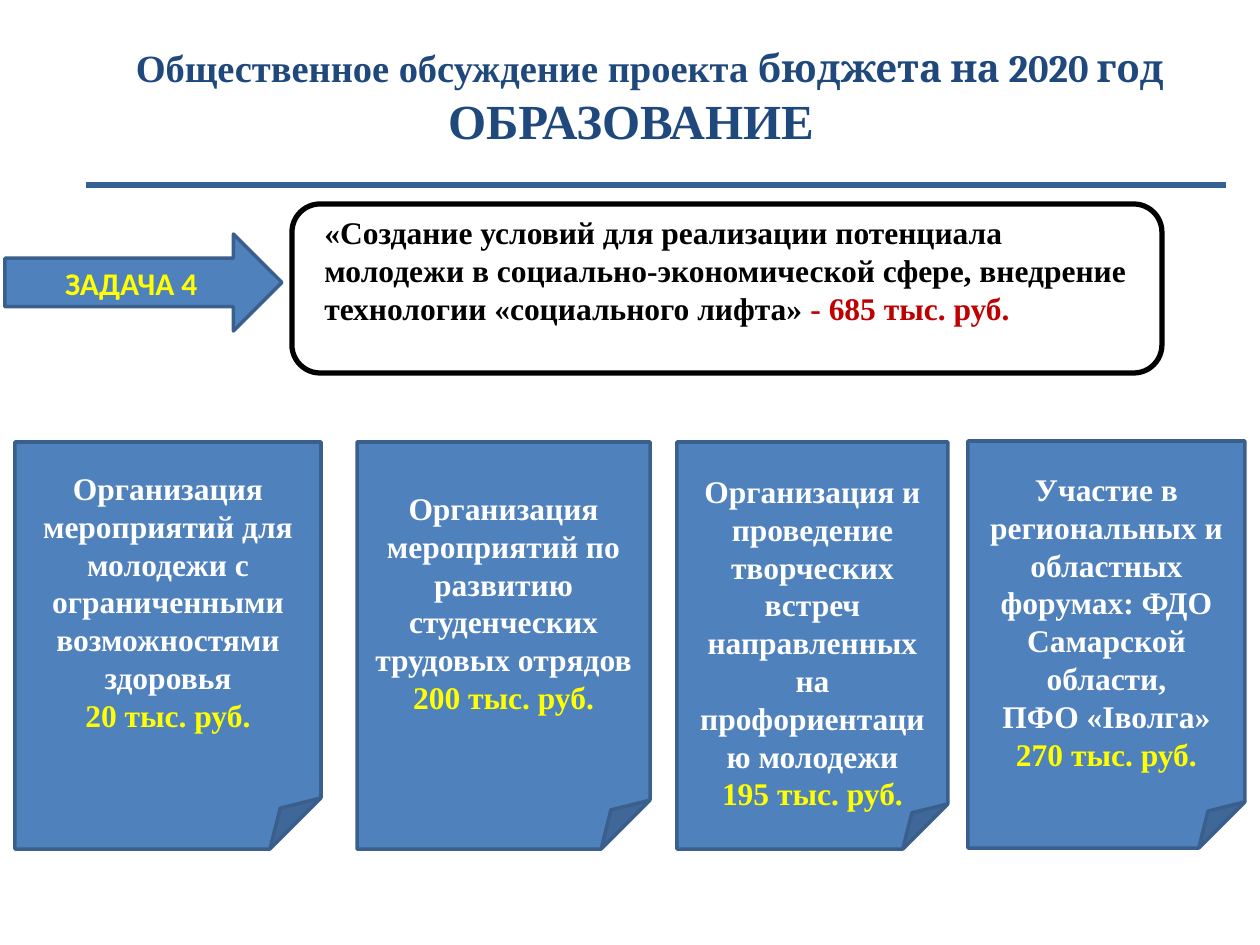
from typing import NamedTuple

from pptx import Presentation
from pptx.dml.color import RGBColor
from pptx.enum.shapes import MSO_CONNECTOR as Connector, MSO_SHAPE as Shape
from pptx.enum.text import MSO_ANCHOR as Anchor, PP_ALIGN as Align
from pptx.oxml.ns import qn
from pptx.util import Emu, Pt

PX = 914400 / 126
SERIF = "Times New Roman"
COLORS = {
    "blue": "4F81BD", "edge": "3A5F8C", "rule": "376092", "navy": "1F497D",
    "white": "FFFFFF", "black": "000000", "yellow": "FFFF00", "red": "C00000",
}


class Span(NamedTuple):
    text: str
    color: str
    size: int = 18
    font: str = SERIF


class Card(NamedTuple):
    left: int
    top: int
    width: int
    inset: int
    lines: tuple[str, ...]
    cost: str


CARDS = (
    Card(15, 442, 306, 27,
         ("Организация мероприятий для молодежи с ограниченными возможностями здоровья",),
         "20 тыс. руб."),
    Card(357, 442, 293, 47,
         ("Организация мероприятий по развитию студенческих трудовых отрядов",),
         "200 тыс. руб."),
    Card(677, 442, 271, 30,
         ("Организация и проведение творческих встреч направленных на профориентацию молодежи",),
         "195 тыс. руб."),
    Card(968, 441, 277, 29,
         ("Участие в региональных и областных форумах: ФДО Самарской области,",
          "ПФО «Iволга»"),
         "270 тыс. руб."),
)


def px(length: int) -> Emu:
    return Emu(round(length * PX))


def rgb(name: str) -> RGBColor:
    return RGBColor.from_string(COLORS[name])


def write(box, paragraphs: list[list[Span]], *, align=Align.CENTER,
          anchor=Anchor.MIDDLE, inset: int = 6, indent: int = 0) -> None:
    """Fill a box with bold text, one list of spans per paragraph."""
    frame = box.text_frame
    frame.word_wrap = True
    frame.vertical_anchor = anchor
    frame.margin_top = px(inset)
    frame.margin_bottom = px(6 if anchor == Anchor.MIDDLE else 0)
    for index, spans in enumerate(paragraphs):
        para = frame.add_paragraph() if index else frame.paragraphs[0]
        para.alignment = align
        if indent:
            para._p.get_or_add_pPr().set("indent", str(px(indent)))
        for span in spans:
            run = para.add_run()
            run.text = span.text
            run.font.name = span.font
            run.font.size = Pt(span.size)
            run.font.bold = True
            run.font.color.rgb = rgb(span.color)


def add_box(page, kind, left: int, top: int, width: int, height: int, *,
            fill: str | None = "blue", line: str = "edge", weight: int = 2):
    box = page.shapes.add_shape(kind, px(left), px(top), px(width), px(height))
    box.shadow.inherit = False
    if fill:
        box.fill.solid()
        box.fill.fore_color.rgb = rgb(fill)
    else:
        box.fill.background()
    box.line.color.rgb = rgb(line)
    box.line.width = Pt(weight)
    return box


def add_text(page, left: int, top: int, width: int, height: int,
             paragraphs: list[list[Span]], **layout) -> None:
    box = page.shapes.add_textbox(px(left), px(top), px(width), px(height))
    write(box, paragraphs, **layout)


def add_rule(page, left: int, right: int, y: int) -> None:
    rule = page.shapes.add_connector(
        Connector.STRAIGHT, px(left), px(y), px(right), px(y))
    rule.line.color.rgb = rgb("rule")
    rule.line.width = Pt(3)
    properties = rule._element.spPr
    properties.append(properties.makeelement(qn("a:effectLst"), {}))


def add_card(page, card: Card) -> None:
    box = add_box(page, Shape.FOLDED_CORNER, card.left, card.top, card.width, 407)
    paragraphs = [[Span(line, "white")] for line in card.lines]
    write(box, paragraphs + [[Span(card.cost, "yellow")]],
          anchor=Anchor.TOP, inset=card.inset)


def main() -> None:
    deck = Presentation()
    deck.slide_width, deck.slide_height = px(1260), px(945)
    page = deck.slides.add_slide(deck.slide_layouts[6])

    # Task goal
    add_box(page, Shape.ROUNDED_RECTANGLE, 292, 204, 870, 169,
            fill=None, line="black", weight=3)
    add_text(page, 312, 207, 839, 127, [[
        Span("«Создание условий для реализации потенциала молодежи в "
             "социально-экономической сфере, внедрение технологии "
             "«социального лифта» ", "black"),
        Span("- 685 тыс. руб.", "red"),
    ]], align=Align.LEFT, anchor=Anchor.TOP)

    # Measures with their cost
    for card in CARDS:
        add_card(page, card)

    # Task number
    arrow = add_box(page, Shape.RIGHT_ARROW, 5, 234, 277, 97)
    write(arrow, [[Span("ЗАДАЧА 4", "yellow", font="Calibri")]])

    # Heading
    add_rule(page, 86, 1226, 185)
    add_text(page, 64, 21, 1134, 152, [[
        Span("Общественное обсуждение проекта ", "navy", 22),
        Span("бюджета на 2020 год ", "navy", 22, "Cambria"),
        Span("ОБРАЗОВАНИЕ", "navy", 28),
    ]], indent=38)

    deck.save("out.pptx")


if __name__ == "__main__":
    main()
